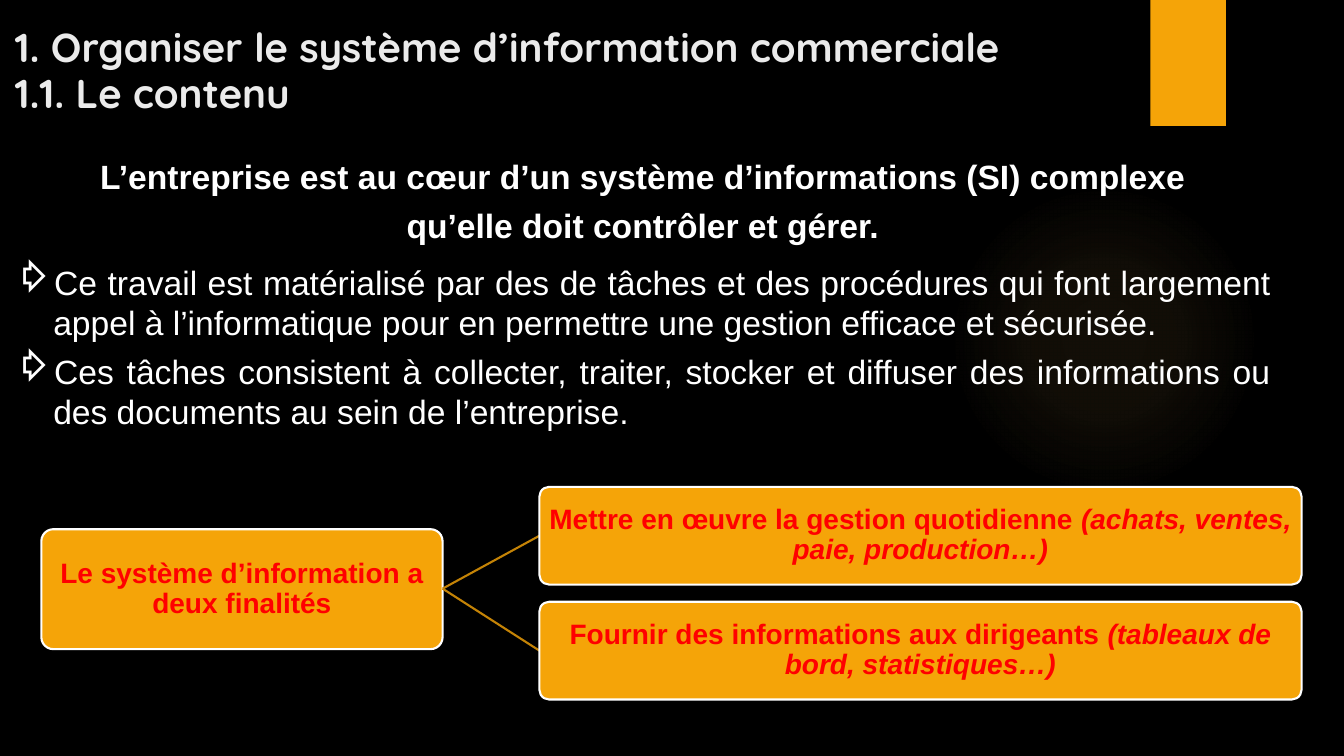
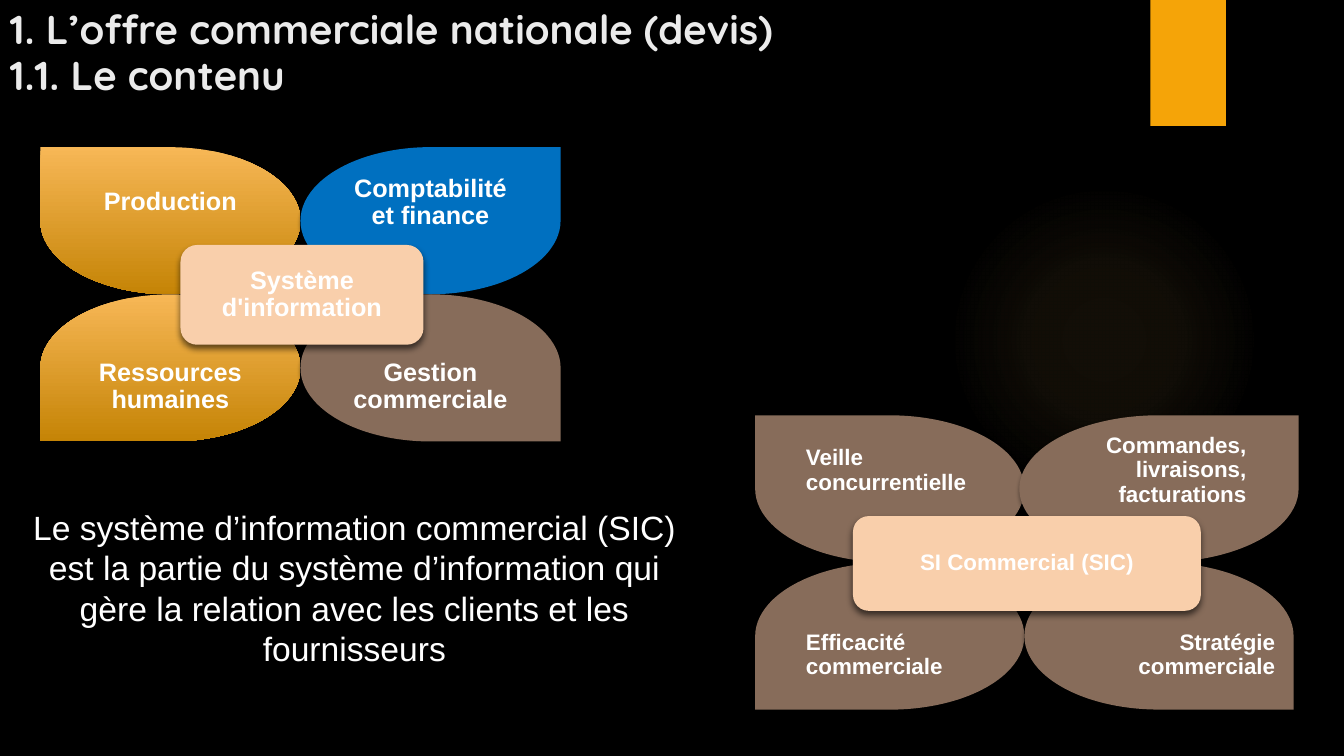
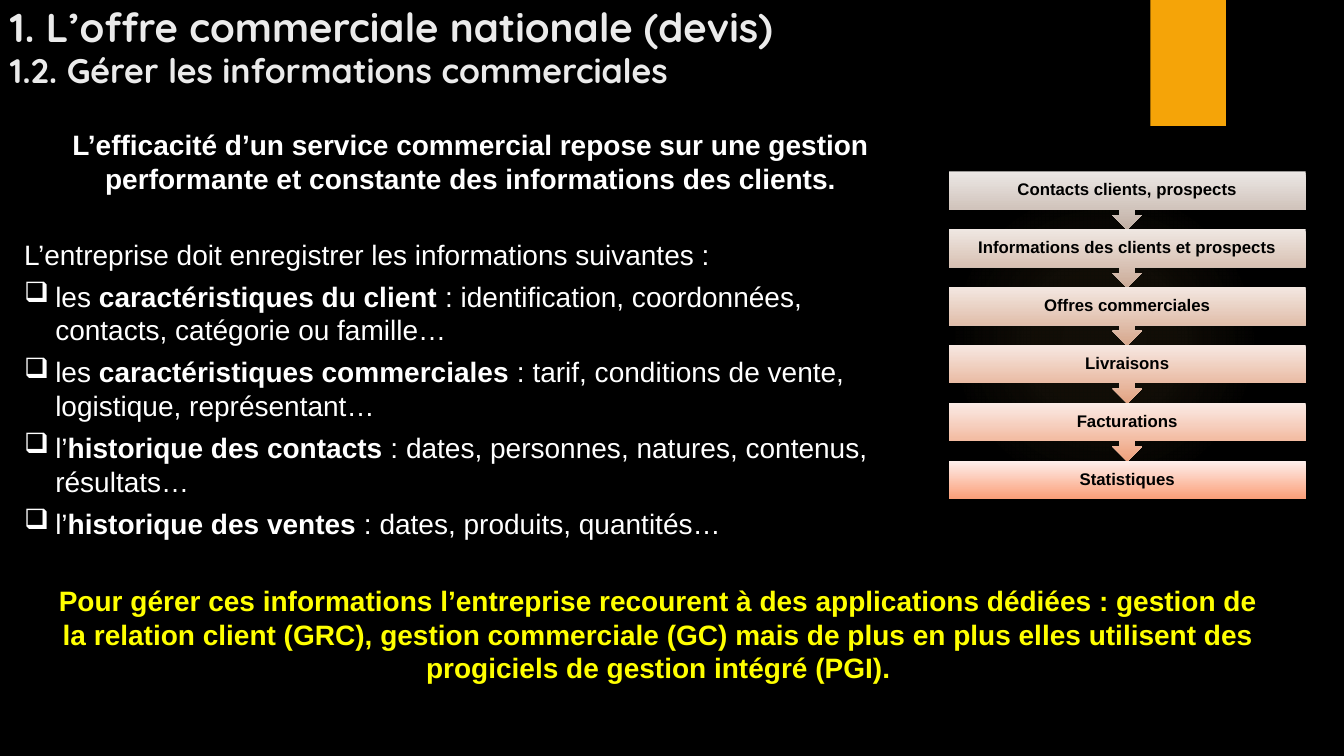
from lxml import etree
from pptx import Presentation, util as u
from pptx.dml.color import RGBColor
from pptx.enum import shapes, text
from pptx.oxml import parse_xml
from pptx.oxml.ns import nsdecls, qn

WIDTH, HEIGHT = 13.33, 7.5
ORANGE, WHITE, BLACK, RED = "F5A408", "FFFFFF", "000000", "FF0000"
AMBER, BROWN, PEACH = ("F7B756", "C58406"), ("876C5A",), ("F9CFAB",)
KIND, ALIGN, ANCHOR = shapes.MSO_SHAPE, text.PP_ALIGN, text.MSO_ANCHOR
rgb = RGBColor.from_string


def add_block(slide, kind, box, colours, rotation=0, outline=None, shadow=None):
    """Fill box as seen after rotation; two colours run from top to bottom.

    shadow is opacity in percent, blur and distance in points.
    """
    left, top, width, height = box
    if rotation % 180:
        left, top = left + (width - height) / 2, top + (height - width) / 2
        width, height = height, width
    shape = slide.shapes.add_shape(kind, *map(u.Inches, (left, top, width, height)))
    shape.rotation = rotation
    shape.shadow.inherit = False
    if len(colours) == 1:
        shape.fill.solid()
        shape.fill.fore_color.rgb = rgb(colours[0])
    else:
        shape.fill.gradient()
        shape.fill.gradient_angle = (270 + rotation) % 360
        for stop, colour in zip(shape.fill.gradient_stops, colours):
            stop.color.rgb = rgb(colour)
    if outline:
        shape.line.color.rgb = rgb(outline)
        shape.line.width = u.Pt(1.5)
    else:
        shape.line.fill.background()
    if shadow:
        opacity, blur, distance = shadow
        effects = shape.element.spPr.find(qn("a:effectLst"))
        effects.append(parse_xml(
            f'<a:outerShdw {nsdecls("a")} blurRad="{u.Pt(blur)}" dist="{u.Pt(distance)}" '
            f'dir="5400000" rotWithShape="0"><a:srgbClr val="{BLACK}">'
            f'<a:alpha val="{opacity * 1000}"/></a:srgbClr></a:outerShdw>'))
    return shape


def write(shape, lines, size, colour, align=ALIGN.LEFT, bold=False, font="Arial",
          anchor=ANCHOR.TOP, inset=None, spacing=None, before=0, after=0,
          bullet=None, indent=0):
    """Append paragraphs; text between bars is bold, or italic if all is bold."""
    frame = shape.text_frame
    frame.word_wrap = True
    frame.vertical_anchor = anchor
    if inset is not None:
        frame.margin_left = frame.margin_right = u.Inches(inset)
        frame.margin_top = frame.margin_bottom = u.Inches(inset)
    for line in lines:
        first = not frame.text
        paragraph = frame.paragraphs[0] if first else frame.add_paragraph()
        paragraph.alignment = align
        paragraph.line_spacing = spacing
        paragraph.space_before = u.Pt(0 if first else before)
        paragraph.space_after = u.Pt(after)
        if bullet:
            properties = paragraph._p.get_or_add_pPr()
            properties.set("marL", str(u.Inches(indent)))
            properties.set("indent", str(-u.Inches(indent)))
            etree.SubElement(properties, qn("a:buChar")).set("char", bullet)
        for index, part in enumerate(line.split("|")):
            if part:
                run = paragraph.add_run()
                run.text = part
                run.font.name, run.font.size = font, u.Pt(size)
                run.font.color.rgb = rgb(colour)
                run.font.bold = bold or index % 2 == 1
                run.font.italic = bold and index % 2 == 1


presentation = Presentation()
presentation.slide_width, presentation.slide_height = u.Inches(WIDTH), u.Inches(HEIGHT)
background = presentation.slide_master.background.fill
background.solid()
background.fore_color.rgb = rgb(BLACK)

# Shared parts: glow, orange band and title
OFFER = "1. L’offre commerciale nationale (devis)"
titles = [
    ((0.05, 0.1, 12.38, 1.12),
     [("1. Organiser le système d’information commerciale", 28.8), ("1.1. Le contenu", 28.8)]),
    ((0, 0, 9.65, 1.04), [(OFFER, 28.8), ("1.1. Le contenu", 28.8)]),
    ((0, 0.26, 9.65, 0.69), [(OFFER, 28.8), ("1.2. Gérer les informations commerciales", 24.3)]),
]
glow_stops = "".join(
    f'<a:gs pos="{position}000"><a:srgbClr val="FAC96A"><a:alpha val="{opacity}000"/></a:srgbClr></a:gs>'
    for position, opacity in ((0, 7), (36, 6), (69, 0)))
glow_fill = (f'<a:gradFill {nsdecls("a")}><a:gsLst>{glow_stops}</a:gsLst><a:path path="circle">'
             '<a:fillToRect l="50000" t="50000" r="50000" b="50000"/></a:path></a:gradFill>')
slides = []
for title_box, title_lines in titles:
    slide = presentation.slides.add_slide(presentation.slide_layouts[6])
    glow = add_block(slide, KIND.OVAL, (9.41, 1.83, 3.08, 3.08), (ORANGE,))
    properties = glow.element.spPr
    properties.replace(properties.find(qn("a:solidFill")), parse_xml(glow_fill))
    add_block(slide, KIND.RECTANGLE, (11.41, 0, 0.75, HEIGHT / 6), (ORANGE,))
    title = slide.shapes.add_textbox(*map(u.Inches, title_box))
    for line, size in title_lines:
        write(title, [line], size, "EBEBEB", bold=True, font="Quicksand",
              anchor=ANCHOR.BOTTOM, spacing=0.95)
    slides.append(slide)
purpose_slide, system_slide, records_slide = slides

# Slide 1: the two purposes of the information system
body = purpose_slide.shapes.add_textbox(*map(u.Inches, (0.05, 1.5, 12.65, 2.86)))
write(body, ["L’entreprise est au cœur d’un système d’informations (SI) complexe"],
      24, WHITE, ALIGN.CENTER, bold=True, after=6)
write(body, ["qu’elle doit contrôler et gérer."], 24, WHITE, ALIGN.CENTER, bold=True, after=12)
write(body, [
    "Ce travail est matérialisé par des de tâches et des procédures qui font largement appel à "
    "l’informatique pour en permettre une gestion efficace et sécurisée.",
    "Ces tâches consistent à collecter, traiter, stocker et diffuser des informations ou des "
    "documents au sein de l’entreprise.",
], 24, WHITE, ALIGN.JUSTIFY, after=6, bullet="⇨", indent=0.38)

root_right, root_middle, branch_left, branch_height = 4.39, 5.84, 5.35, 0.97
tree = [
    ((0.41, 5.25, 3.98, 1.19), "Le système d’information a deux finalités"),
    ((branch_left, 4.83, 7.56, branch_height),
     "Mettre en œuvre la gestion quotidienne |(achats, ventes, paie, production…)|"),
    ((branch_left, 5.97, 7.56, branch_height),
     "Fournir des informations aux dirigeants |(tableaux de bord, statistiques…)|"),
]
for box, label in tree:
    if box[0] == branch_left:
        ends = (root_right, root_middle, branch_left, box[1] + branch_height / 2)
        link = purpose_slide.shapes.add_connector(shapes.MSO_CONNECTOR.STRAIGHT, *map(u.Inches, ends))
        link.line.color.rgb = rgb("C48306")
        link.line.width = u.Pt(1.5)
        etree.SubElement(link.element.spPr, qn("a:effectLst"))
    node = add_block(purpose_slide, KIND.ROUNDED_RECTANGLE, box, (ORANGE,), outline=WHITE)
    node.adjustments[0] = 0.1
    write(node, [label], 20, RED, ALIGN.CENTER, bold=True, anchor=ANCHOR.MIDDLE,
          inset=0.03, spacing=0.9)

# Slide 2: two flowers of four leaves around a hub
LEAF_HEIGHT = 1.46
LEFT, CENTER, RIGHT = ALIGN.LEFT, ALIGN.CENTER, ALIGN.RIGHT
# Leaf: label, colours, alignment, extra width, side margin as a share of the width
flowers = [
    (0.4, 1.46, 2.58, 18, (1.79, 2.43, 2.41, 0.99), "Système d'information", [
        ("Production", AMBER, CENTER, 0, 0.14),
        ("Comptabilité et finance", ("0070C0",), CENTER, 0, 0.14),
        ("Ressources humaines", AMBER, CENTER, 0, 0.14),
        ("Gestion commerciale", BROWN, CENTER, 0, 0.02)]),
    (7.49, 4.12, 2.67, 16, (8.46, 5.12, 3.45, 0.94), "SI Commercial (SIC)", [
        ("Veille concurrentielle", BROWN, LEFT, 0, 0.14),
        ("Commandes, livraisons, facturations", BROWN, RIGHT, 0.1, 0.14),
        ("Efficacité commerciale", BROWN, LEFT, 0, 0.14),
        ("Stratégie commerciale", BROWN, RIGHT, 0, 0.02)]),
]
for left, top, width, size, hub_box, hub_label, leaves in flowers:
    for index, (label, colours, align, extra, margin) in enumerate(leaves):
        row, column = divmod(index, 2)
        x, y = left + column * width - extra / 2, top + row * LEAF_HEIGHT
        leaf_width = width + extra
        add_block(system_slide, KIND.TEAR, (x, y, leaf_width, LEAF_HEIGHT), colours,
                  rotation=(270, 0, 180, 90)[index], shadow=(45, 3, 2))
        label_box = (x + margin * leaf_width, y + (0.16, 0.53)[row],
                     (1 - 2 * margin) * leaf_width, 0.78)
        caption = system_slide.shapes.add_textbox(*map(u.Inches, label_box))
        write(caption, [label], size, WHITE, align, bold=True, anchor=ANCHOR.MIDDLE,
              inset=0.13, spacing=0.9)
    hub = add_block(system_slide, KIND.ROUNDED_RECTANGLE, hub_box, PEACH, shadow=(60, 5, 3))
    write(hub, [hub_label], size, WHITE, CENTER, bold=True, anchor=ANCHOR.MIDDLE,
          inset=0.07, spacing=0.9)

definition = system_slide.shapes.add_textbox(*map(u.Inches, (0.18, 4.98, 6.67, 1.72)))
write(definition, ["Le système d’information commercial (SIC) est la partie du système d’information "
                   "qui gère la relation avec les clients et les fournisseurs"], 24, WHITE, CENTER)

# Slide 3: chain of records, and what to record
steps = [
    ("Contacts clients, prospects", "ECE8E5", "C1AFA4"),
    ("Informations des clients et prospects", "EFE7E2", "CBAB98"),
    ("Offres commerciales", "F3E7E1", "D6A78C"),
    ("Livraisons", "F7E8E2", "E2A382"),
    ("Facturations", "FBEBE6", "EEA07B"),
    ("Statistiques", "FEF0ED", "FB9E78"),
]
for index, (label, *colours) in enumerate(steps):
    last = index == len(steps) - 1
    kind, height = (KIND.RECTANGLE, 0.38) if last else (KIND.DOWN_ARROW_CALLOUT, 0.58)
    step = add_block(records_slide, kind, (9.41, 1.7 + index * 0.574, 3.54, height), colours)
    write(step, [label], 12, BLACK, CENTER, bold=True, anchor=ANCHOR.MIDDLE,
          inset=0.05, spacing=0.9)

records = records_slide.shapes.add_textbox(*map(u.Inches, (0.14, 1.22, 9.06, 4.19)))
write(records, ["L’efficacité d’un service commercial repose sur une gestion performante et constante "
                "des informations des clients."], 20, WHITE, CENTER, bold=True)
write(records, ["L’entreprise doit enregistrer les informations suivantes :"], 20, WHITE, before=30)
write(records, [
    "les |caractéristiques du client| : identification, coordonnées, contacts, catégorie ou famille…",
    "les |caractéristiques commerciales| : tarif, conditions de vente, logistique, représentant…",
    "l’|historique des contacts| : dates, personnes, natures, contenus, résultats…",
    "l’|historique des ventes| : dates, produits, quantités…",
], 20, WHITE, before=6, bullet="❑", indent=0.31)

conclusion = records_slide.shapes.add_textbox(*map(u.Inches, (0.42, 5.74, 12.22, 1.11)))
write(conclusion, ["Pour gérer ces informations l’entreprise recourent à des applications dédiées : gestion "
                   "de la relation client (GRC), gestion commerciale (GC) mais de plus en plus elles "
                   "utilisent des progiciels de gestion intégré (PGI)."],
      20, "FFFF00", CENTER, bold=True)

presentation.save("out.pptx")
